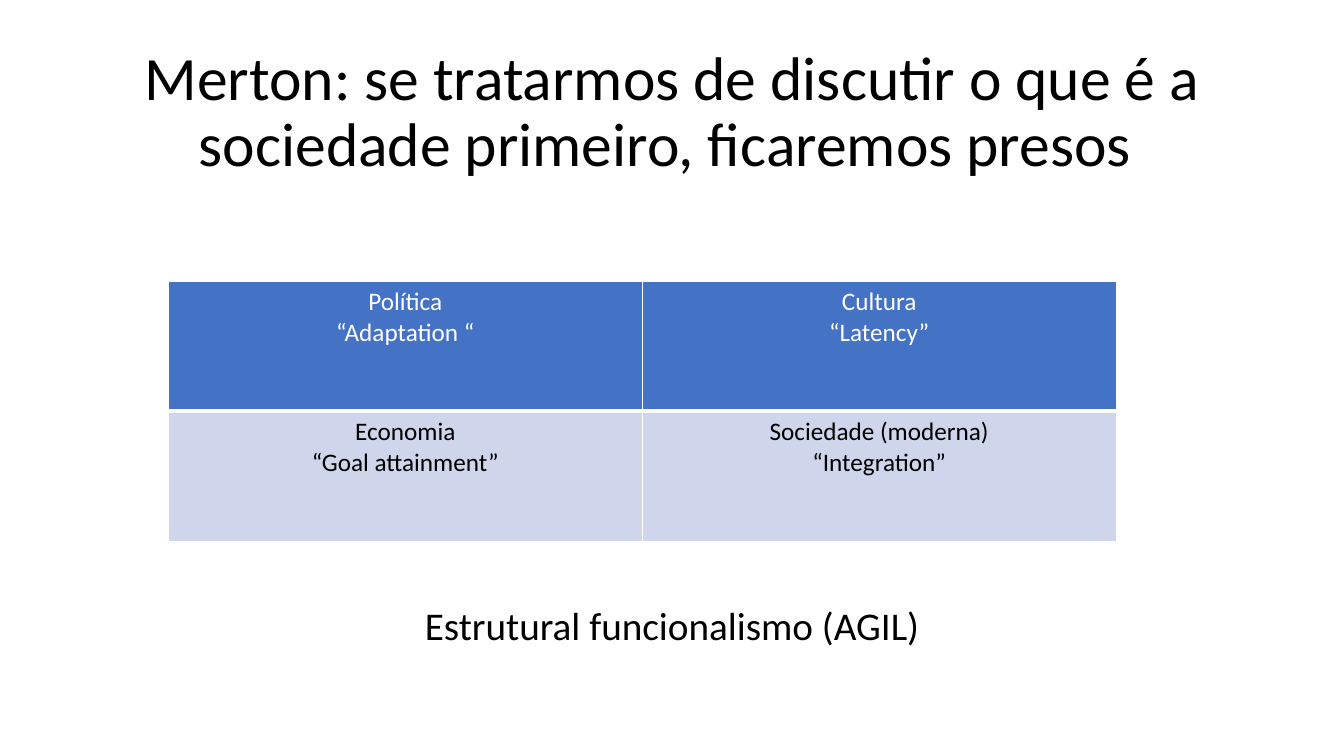
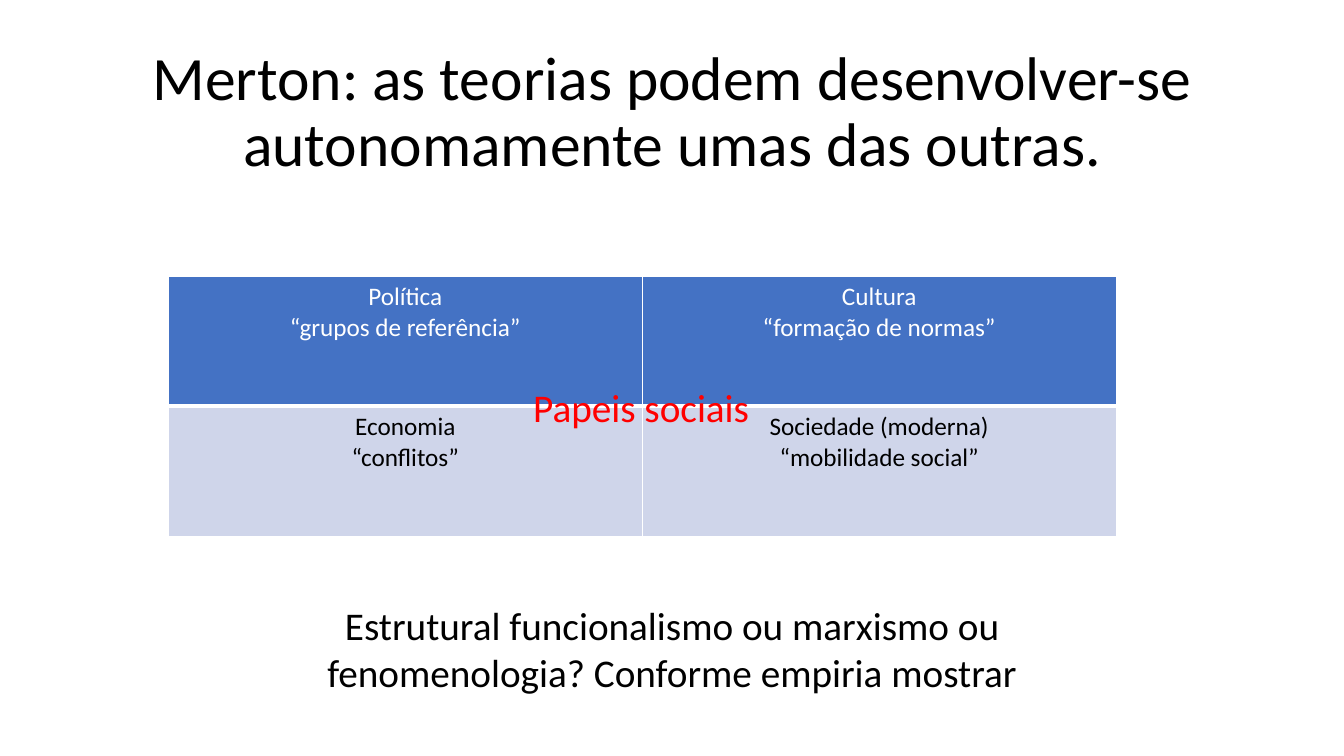
from pptx import Presentation
from pptx.dml.color import RGBColor
from pptx.enum.text import MSO_ANCHOR, MSO_AUTO_SIZE, PP_ALIGN
from pptx.oxml.ns import qn
from pptx.util import Inches, Pt
from lxml.etree import SubElement

COLORS = {
    "text": "000000",
    "header_text": "FFFFFF",
    "header_fill": "4472C4",
    "body_fill": "CFD5EA",
    "border": "FFFFFF",
    "highlight": "FF0000",
}
FONT = "Calibri"
TITLE_BOX = (0.92, 0.4, 11.5, 1.45)
TABLE_LEFT, TABLE_WIDTH, TABLE_HEIGHT = 1.67, 9.4, 2.58

SLIDES = [
    {
        "title": "Merton: se tratarmos de discutir o que é a sociedade primeiro, ficaremos presos ",
        "table_top": 2.79,
        "cells": [
            [("Política", "“Adaptation “"), ("Cultura", "“Latency”")],
            [("Economia", "“Goal attainment”"), ("Sociedade (moderna)", "“Integration”")],
        ],
        "caption": "Estrutural funcionalismo (AGIL)",
        "caption_height": 0.57,
    },
    {
        "title": "Merton: as teorias podem desenvolver-se autonomamente umas das outras.",
        "table_top": 2.74,
        "cells": [
            [("Política", "“grupos de referência”"), ("Cultura", "“formação de normas”")],
            [("Economia", "“conflitos”"), ("Sociedade (moderna)", "“mobilidade social”")],
        ],
        "caption": "Estrutural funcionalismo ou marxismo ou fenomenologia? Conforme empiria mostrar",
        "caption_height": 1.04,
        "center_label": "Papeis sociais",
    },
]


def write_text(frame, lines, size, color, align=PP_ALIGN.CENTER, spacing=None):
    for index, line in enumerate(lines):
        para = frame.paragraphs[0] if index == 0 else frame.add_paragraph()
        para.alignment = align
        para.line_spacing = spacing
        span = para.add_run()
        span.text = line
        for name, value in {"name": FONT, "size": Pt(size), "bold": False}.items():
            setattr(span.font, name, value)
        span.font.color.rgb = RGBColor.from_string(COLORS[color])


def add_title(page, box, text):
    title = page.shapes.title
    for name, value in zip(("left", "top", "width", "height"), box):
        setattr(title, name, Inches(value))
    frame = title.text_frame
    frame.auto_size = MSO_AUTO_SIZE.NONE
    frame.vertical_anchor = MSO_ANCHOR.MIDDLE
    write_text(frame, [text], 44, "text", spacing=0.9)


def add_label(page, box, text, color="text", align=PP_ALIGN.CENTER, wrap=True):
    frame = page.shapes.add_textbox(*map(Inches, box)).text_frame
    frame.word_wrap = wrap
    frame.auto_size = MSO_AUTO_SIZE.SHAPE_TO_FIT_TEXT
    write_text(frame, [text], 28, color, align)


def set_borders(cell, bottom_width):
    properties = cell._tc.get_or_add_tcPr()
    for side, width in {"L": 1, "R": 1, "T": 1, "B": bottom_width}.items():
        line = SubElement(properties, qn(f"a:ln{side}"), w=str(Pt(width)))
        fill = SubElement(line, qn("a:solidFill"))
        SubElement(fill, qn("a:srgbClr"), val=COLORS["border"])


def add_matrix(page, box, cells):
    left, top, width, height = map(Inches, box)
    rows, columns = len(cells), len(cells[0])
    table = page.shapes.add_table(rows, columns, left, top, width, height).table
    for row, entries in enumerate(cells):
        header = row == 0
        for column, lines in enumerate(entries):
            cell = table.cell(row, column)
            set_borders(cell, 3 if header else 1)
            cell.fill.solid()
            fill = COLORS["header_fill" if header else "body_fill"]
            cell.fill.fore_color.rgb = RGBColor.from_string(fill)
            write_text(cell.text_frame, lines, 18, "header_text" if header else "text")


def add_theory_slide(deck, content):
    page = deck.slides.add_slide(deck.slide_layouts[5])
    add_title(page, TITLE_BOX, content["title"])
    matrix_box = (TABLE_LEFT, content["table_top"], TABLE_WIDTH, TABLE_HEIGHT)
    add_matrix(page, matrix_box, content["cells"])
    add_label(page, (3.07, 5.92, 7.19, content["caption_height"]), content["caption"])
    if "center_label" in content:
        label_box = (TABLE_LEFT + 3.52, content["table_top"] + 1.01, 2.37, 0.57)
        add_label(page, label_box, content["center_label"], "highlight", PP_ALIGN.LEFT, False)


def main():
    deck = Presentation()
    deck.slide_width, deck.slide_height = Inches(13.33), Inches(7.5)
    for content in SLIDES:
        add_theory_slide(deck, content)
    deck.save("out.pptx")


if __name__ == "__main__":
    main()
